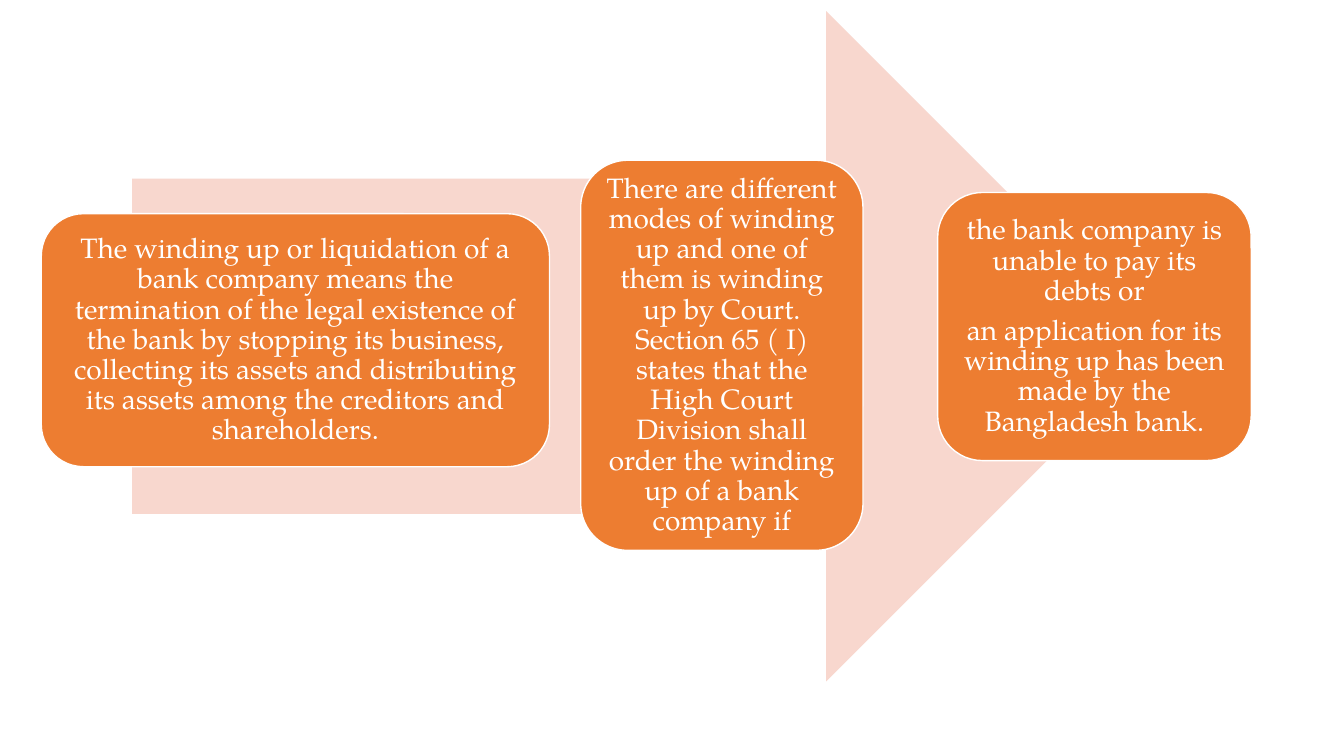
from dataclasses import dataclass

from pptx import Presentation
from pptx.dml.color import RGBColor
from pptx.enum.shapes import MSO_SHAPE
from pptx.enum.text import MSO_ANCHOR, PP_ALIGN
from pptx.util import Inches, Pt

RIGHT_ARROW = MSO_SHAPE.RIGHT_ARROW
ROUNDED = MSO_SHAPE.ROUNDED_RECTANGLE
MIDDLE = MSO_ANCHOR.MIDDLE
CENTER = PP_ALIGN.CENTER


@dataclass(frozen=True)
class Theme:
    arrow: RGBColor = RGBColor.from_string("F8D7CE")
    step: RGBColor = RGBColor.from_string("ED7D31")
    white: RGBColor = RGBColor.from_string("FFFFFF")
    font: str = "TeX Gyre Pagella"
    size: Pt = Pt(20)
    paragraph_gap: Pt = Pt(7)
    outline: Pt = Pt(1)


theme = Theme()

# Left, top, width, height in inches, then the paragraphs of each step
steps = [
    (0.41, 2.12, 5.04, 2.51, [
        "The winding up or liquidation of a bank company means the termination "
        "of the legal existence of the bank by stopping its business, collecting "
        "its assets and distributing its assets among the creditors and "
        "shareholders.",
    ]),
    (5.76, 1.59, 2.8, 3.87, [
        "There are different modes of winding up and one of them is winding up "
        "by Court. Section 65 ( I) states that the High Court Division shall "
        "order the winding up of a bank company if",
    ]),
    (9.3, 1.91, 3.11, 2.66, [
        "the bank company is unable to pay its debts or",
        "an application for its winding up has been made by the Bangladesh bank.",
    ]),
]

presentation = Presentation()
presentation.slide_width = Inches(13.33)
presentation.slide_height = Inches(7.5)
slide = presentation.slides.add_slide(presentation.slide_layouts[6])


def add_filled(preset, left, top, width, height, color):
    shape = slide.shapes.add_shape(
        preset, Inches(left), Inches(top), Inches(width), Inches(height))
    shape.shadow.inherit = False
    shape.fill.solid()
    shape.fill.fore_color.rgb = color
    return shape


process_arrow = add_filled(RIGHT_ARROW, 1.31, 0.11, 10.21, 6.65, theme.arrow)
process_arrow.line.fill.background()

for left, top, width, height, paragraphs in steps:
    step = add_filled(ROUNDED, left, top, width, height, theme.step)
    step.line.color.rgb = theme.white
    step.line.width = theme.outline

    frame = step.text_frame
    frame.word_wrap = True
    frame.vertical_anchor = MIDDLE
    frame.margin_left = frame.margin_right = Inches(0.08)
    frame.margin_top = frame.margin_bottom = Inches(0.08)
    frame.text = "\n".join(paragraphs)
    for paragraph in frame.paragraphs:
        paragraph.alignment = CENTER
        paragraph.line_spacing = 0.9
        paragraph.space_after = theme.paragraph_gap
        paragraph.font.name = theme.font
        paragraph.font.size = theme.size
        paragraph.font.color.rgb = theme.white

presentation.save("out.pptx")
